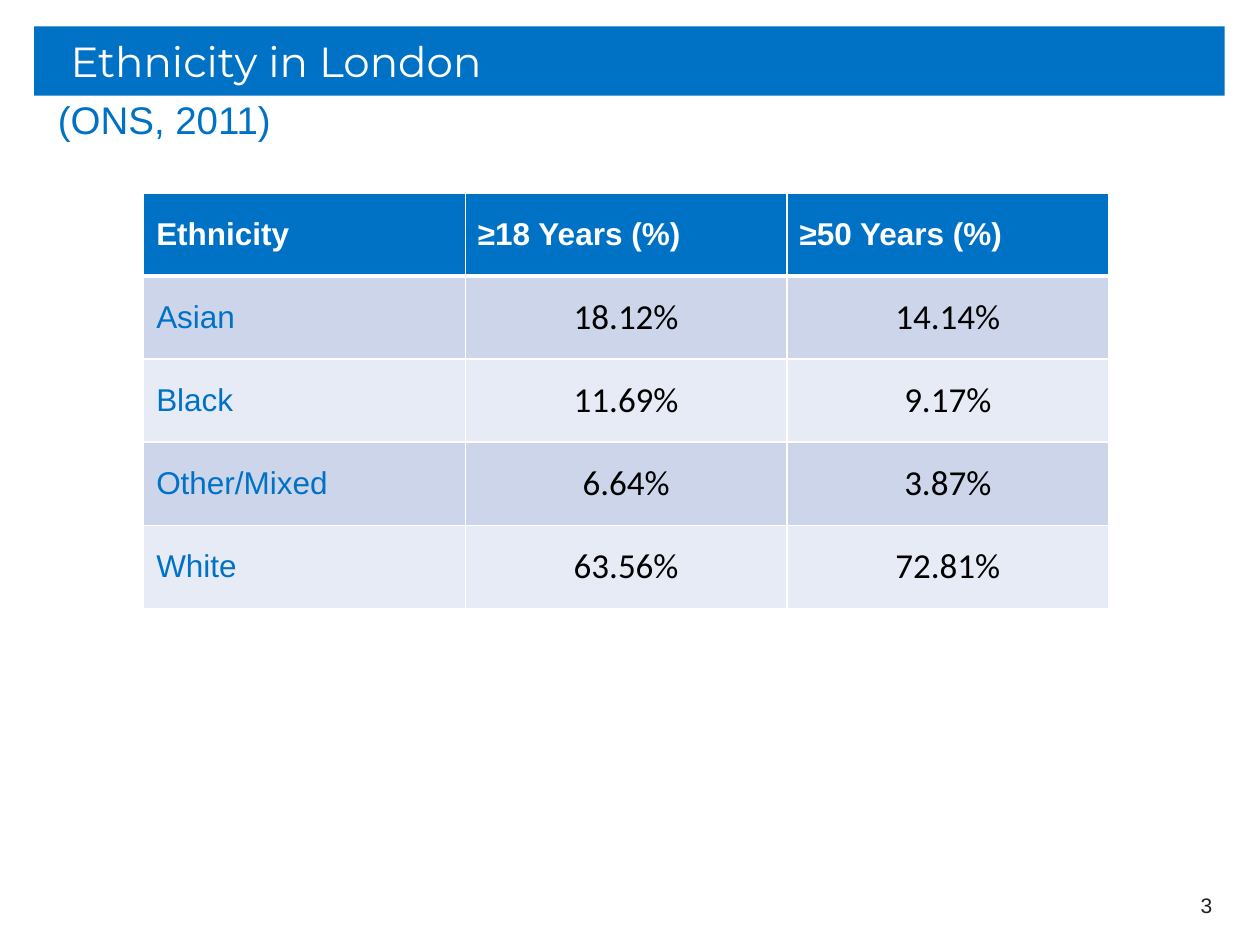
from lxml import etree
from pptx import Presentation
from pptx.dml.color import RGBColor
from pptx.enum.text import MSO_ANCHOR, MSO_AUTO_SIZE, PP_ALIGN
from pptx.oxml.ns import qn
from pptx.util import Inches, Pt

LEFT, CENTER, RIGHT = PP_ALIGN.LEFT, PP_ALIGN.CENTER, PP_ALIGN.RIGHT
TOP, MIDDLE = MSO_ANCHOR.TOP, MSO_ANCHOR.MIDDLE
NO_AUTOFIT = MSO_AUTO_SIZE.NONE

BLUE = RGBColor(0x00, 0x72, 0xC6)
WHITE = RGBColor(0xFF, 0xFF, 0xFF)
BLACK = RGBColor(0x00, 0x00, 0x00)
DARK = RGBColor(0x20, 0x20, 0x20)
BANDS = [RGBColor(0xCC, 0xD5, 0xEA), RGBColor(0xE7, 0xEB, 0xF5)]

# Content
TITLE = "Ethnicity in London"
SOURCE = "(ONS, 2011)"
PAGE = "3"
ROWS = [
    ("Ethnicity", "≥18 Years (%)", "≥50 Years (%)"),
    ("Asian", "18.12%", "14.14%"),
    ("Black", "11.69%", "9.17%"),
    ("Other/Mixed", "6.64%", "3.87%"),
    ("White", "63.56%", "72.81%"),
]

# Text formats
TITLE_FONT = {"name": "Montserrat", "size": Pt(24), "bold": False}
SOURCE_FONT = {"name": "Arial", "size": Pt(22)}
PAGE_FONT = {"name": "Arial", "size": Pt(12)}
HEADER_FONT = {"name": "Arial", "size": Pt(18), "bold": True}
LABEL_FONT = {"name": "Arial", "size": Pt(18), "bold": False}
VALUE_FONT = {"name": "Calibri", "size": Pt(20), "bold": False}
NO_MARGINS = dict.fromkeys(
    ("margin_left", "margin_top", "margin_right", "margin_bottom"), 0)


def set_attrs(obj, values):
    for name, value in values.items():
        setattr(obj, name, value)


def place(sp, left, top, width, height):
    set_attrs(sp, {"left": Inches(left), "top": Inches(top),
                   "width": Inches(width), "height": Inches(height)})


def write(tf, text, font, color, align=LEFT):
    p = tf.paragraphs[0]
    p.alignment = align
    r = p.add_run()
    r.text = text
    set_attrs(r.font, font)
    r.font.color.rgb = color
    return p


def indent(p):
    pPr = p._p.get_or_add_pPr()
    pPr.set("marL", str(Inches(0.19)))
    pPr.set("indent", "0")
    etree.SubElement(pPr, qn("a:buNone"))


def set_borders(cell, bottom, top):
    tcPr = cell._tc.get_or_add_tcPr()
    widths = {"a:lnL": 1, "a:lnR": 1, "a:lnT": top, "a:lnB": bottom}
    for i, (tag, width) in enumerate(widths.items()):
        ln = etree.Element(qn(tag), w=str(Pt(width)))
        fill = etree.SubElement(ln, qn("a:solidFill"))
        etree.SubElement(fill, qn("a:srgbClr"), val=str(WHITE))
        tcPr.insert(i, ln)


prs = Presentation()
prs.slide_width, prs.slide_height = Inches(10), Inches(7.5)
s = prs.slides.add_slide(prs.slide_layouts[1])
title, body = s.placeholders

# Title bar
place(title, 0.27, 0.21, 9.45, 0.55)
title.fill.solid()
title.fill.fore_color.rgb = BLUE
set_attrs(title.text_frame, {"auto_size": NO_AUTOFIT, "vertical_anchor": MIDDLE})
p = write(title.text_frame, TITLE, TITLE_FONT, WHITE)
p.space_before = Pt(6)
indent(p)

# Source line
place(body, 0.27, 0.76, 9.45, 0.47)
set_attrs(body.text_frame,
          {"auto_size": NO_AUTOFIT, "vertical_anchor": TOP, **NO_MARGINS})
p = write(body.text_frame, SOURCE, SOURCE_FONT, BLUE)
set_attrs(p, {"space_before": Pt(6), "space_after": Pt(6)})
indent(p)

# Page number
sp = s.shapes.add_textbox(Inches(7.39), Inches(6.98), Inches(2.33), Inches(0.4))
set_attrs(sp.text_frame, {"word_wrap": True, "vertical_anchor": MIDDLE})
write(sp.text_frame, PAGE, PAGE_FONT, DARK, RIGHT)

# Ethnicity table
table = s.shapes.add_table(len(ROWS), len(ROWS[0]), Inches(1.14), Inches(1.53),
                           Inches(7.66), Inches(3.3)).table
for i, row in enumerate(ROWS):
    for j, text in enumerate(row):
        cell = table.cell(i, j)
        cell.vertical_anchor = MIDDLE
        cell.fill.solid()
        cell.fill.fore_color.rgb = BLUE if i == 0 else BANDS[(i - 1) % 2]
        set_borders(cell, bottom=3 if i == 0 else 1, top=3 if i == 1 else 1)
        if i == 0:
            write(cell.text_frame, text, HEADER_FONT, WHITE)
        elif j == 0:
            write(cell.text_frame, text, LABEL_FONT, BLUE)
        else:
            set_attrs(cell, NO_MARGINS)
            write(cell.text_frame, text, VALUE_FONT, BLACK, CENTER)

prs.save("out.pptx")
